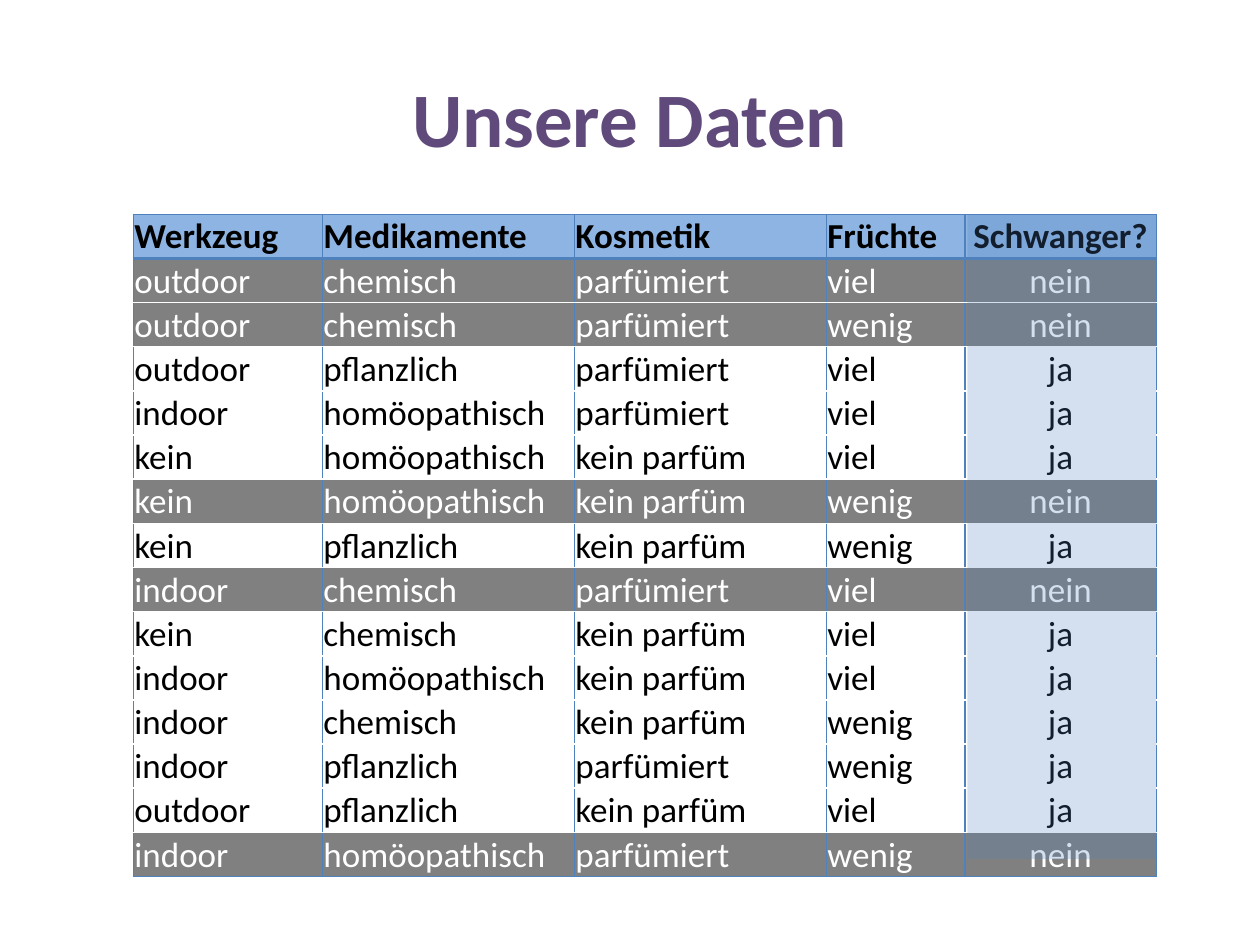
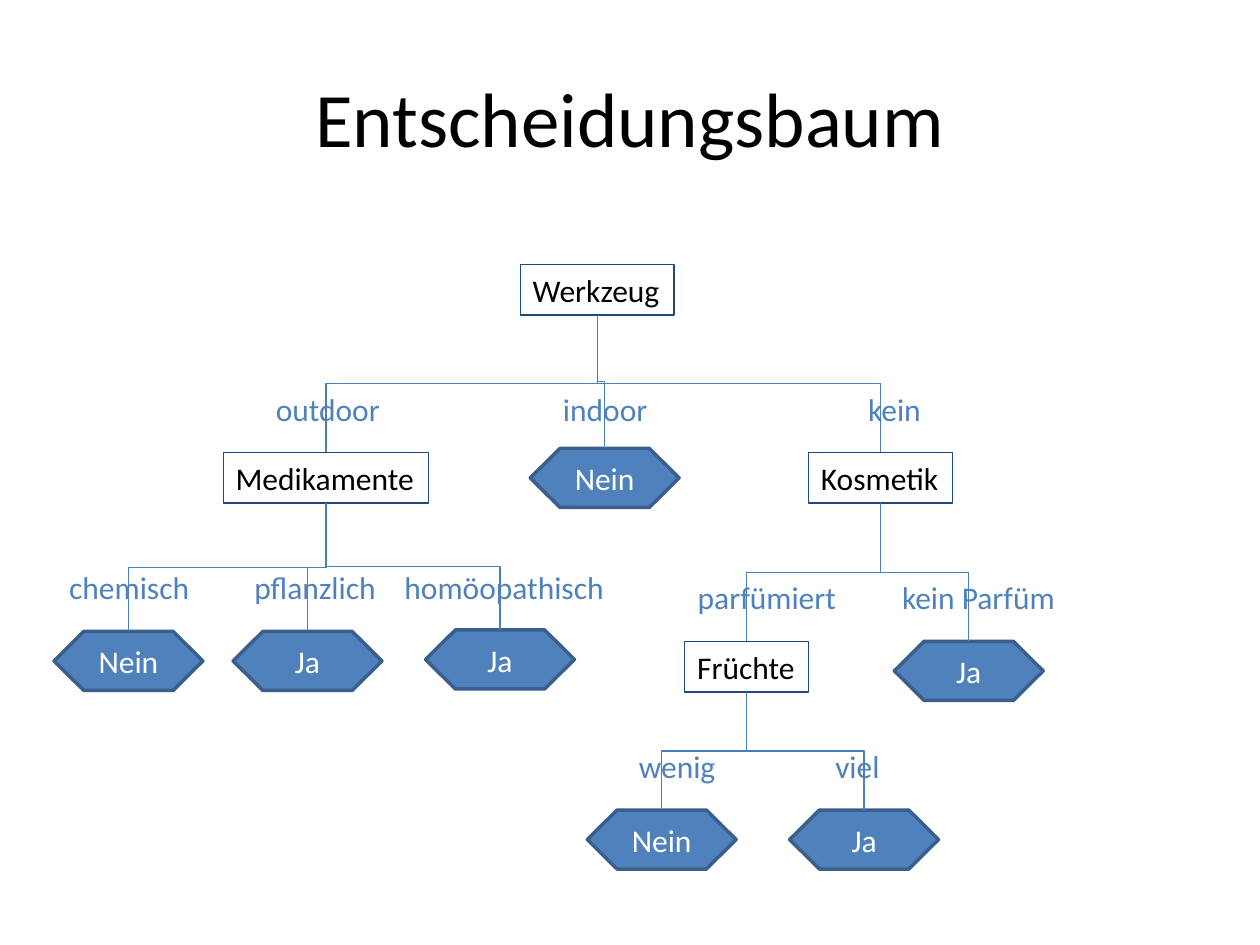
import lxml.etree
import pptx
import pptx.dml.color
import pptx.enum.shapes
import pptx.enum.text
import pptx.oxml.ns
import pptx.util

Cm = pptx.util.Cm
Pt = pptx.util.Pt
FONT = "Calibri"
HUES = {
    "black": "000000", "white": "FFFFFF", "plum": "604A7B", "blue": "4F81BD",
    "sky": "8EB4E3", "gray": "808080", "navy": "1F497D", "edge": "3A5F8C", "link": "4B7EBC",
}
HEADS = ["Werkzeug", "Medikamente", "Kosmetik", "Früchte", "Schwanger?"]
CASES = [
    ("outdoor", "chemisch", "parfümiert", "viel", "nein"),
    ("outdoor", "chemisch", "parfümiert", "wenig", "nein"),
    ("outdoor", "pflanzlich", "parfümiert", "viel", "ja"),
    ("indoor", "homöopathisch", "parfümiert", "viel", "ja"),
    ("kein", "homöopathisch", "kein parfüm", "viel", "ja"),
    ("kein", "homöopathisch", "kein parfüm", "wenig", "nein"),
    ("kein", "pflanzlich", "kein parfüm", "wenig", "ja"),
    ("indoor", "chemisch", "parfümiert", "viel", "nein"),
    ("kein", "chemisch", "kein parfüm", "viel", "ja"),
    ("indoor", "homöopathisch", "kein parfüm", "viel", "ja"),
    ("indoor", "chemisch", "kein parfüm", "wenig", "ja"),
    ("indoor", "pflanzlich", "parfümiert", "wenig", "ja"),
    ("outdoor", "pflanzlich", "kein parfüm", "viel", "ja"),
    ("indoor", "homöopathisch", "parfümiert", "wenig", "nein"),
]
WIDTHS = [3.81, 5.08, 5.08, 2.79, 3.86]
ROW = 0.89

FRUIT = {"text": "Früchte", "x": 13.95, "y": 7.6, "wide": 2.49, "tags": 9.61, "kids": [
    ("wenig", 12.57, 2.08, {"text": "Nein", "x": 12.24, "y": 11}),
    ("viel", 16.2, 1.42, {"text": "Ja", "x": 16.32, "y": 11}),
]}
DRUGS = {"text": "Medikamente", "x": 5.47, "y": 3.79, "wide": 4.14, "tags": 6, "kids": [
    ("chemisch", 1.53, 2.97, {"text": "Nein", "x": 1.49, "y": 7.4}),
    ("pflanzlich", 5.28, 3, {"text": "Ja", "x": 5.1, "y": 7.4}),
    ("homöopathisch", 9.09, 4.57, {"text": "Ja", "x": 8.98, "y": 7.37}),
]}
CARE = {"text": "Kosmetik", "x": 16.65, "y": 3.79, "wide": 2.9, "tags": 6.2, "kids": [
    ("parfümiert", 14.38, 3.33, FRUIT),
    ("kein Parfüm", 18.65, 3.63, {"text": "Ja", "x": 18.43, "y": 7.6}),
]}
TREE = {"text": "Werkzeug", "x": 10.94, "y": 0, "wide": 3.1, "tags": 2.4, "kids": [
    ("outdoor", 5.53, 2.64, DRUGS),
    ("indoor", 11.12, 2.24, {"text": "Nein", "x": 11.09, "y": 3.71}),
    ("kein", 16.95, 1.6, CARE),
]}


def rgb(hue):
    """Return the named colour."""
    return pptx.dml.color.RGBColor.from_string(HUES[hue])


def write(frame, text, size, hue, bold=False, align=None):
    """Put one formatted paragraph into a text frame."""
    frame.text = text
    para = frame.paragraphs[0]
    para.alignment = align
    font = para.font
    font.name, font.size, font.bold = FONT, Pt(size), bold
    font.color.rgb = rgb(hue)


def start(deck, title, hue, bold=False):
    """Add a slide with a formatted title."""
    slide = deck.slides.add_slide(deck.slide_layouts[5])
    head = slide.shapes.title
    head.left, head.top, head.width, head.height = Cm(1.27), Cm(0.76), Cm(22.86), Cm(3.18)
    write(head.text_frame, title, 44, hue, bold, pptx.enum.text.PP_ALIGN.CENTER)
    return slide


def child(parent, tag, **attrs):
    """Append a drawing element."""
    return lxml.etree.SubElement(parent, pptx.oxml.ns.qn(tag), **attrs)


def border(cell, sides):
    """Draw the cell borders given as side and width in points."""
    props = cell._tc.get_or_add_tcPr()
    for side, width in sides.items():
        line = child(props, "a:ln" + side, w=str(Pt(width)))
        child(child(line, "a:solidFill"), "a:srgbClr", val=HUES["blue"])


def fill(cell, text, hue, back, bold, last):
    """Format one table cell."""
    cell.margin_left = cell.margin_right = cell.margin_top = Cm(0.02)
    cell.margin_bottom = 0
    cell.vertical_anchor = pptx.enum.text.MSO_ANCHOR.BOTTOM
    align = pptx.enum.text.PP_ALIGN.CENTER if last else None
    write(cell.text_frame, text, 20, hue, bold, align)
    if back:
        cell.fill.solid()
        cell.fill.fore_color.rgb = rgb(back)
    else:
        cell.fill.background()


def grid(slide, left, top):
    """Draw the data table and tint its answer column."""
    rows = [HEADS, *CASES]
    frame = slide.shapes.add_table(len(rows), len(HEADS), Cm(left), Cm(top),
                                   Cm(sum(WIDTHS)), Cm(ROW * len(rows)))
    table = frame.table
    table.first_row = table.horz_banding = False
    for col, width in zip(table.columns, WIDTHS):
        col.width = Cm(width)
    for r, row in enumerate(rows):
        table.rows[r].height = Cm(ROW)
        if r == 0:
            hue, back, sides = "black", "sky", {"L": 1, "R": 1, "T": 1, "B": 2}
        else:
            hue, back = ("white", "gray") if row[-1] == "nein" else ("black", None)
            sides = {"L": 1, "R": 1, "B": 1}
        for c, text in enumerate(row):
            cell = table.cell(r, c)
            border(cell, sides)
            fill(cell, text, hue, back, r == 0, c == len(row) - 1)
    tint = slide.shapes.add_shape(pptx.enum.shapes.MSO_SHAPE.RECTANGLE,
                                  Cm(left + 16.81), Cm(top), Cm(3.81), Cm(13))
    tint.shadow.inherit = False
    tint.line.fill.background()
    tint.fill.solid()
    tint.fill.fore_color.rgb = rgb("blue")
    shade = tint.fill._xPr.find(".//" + pptx.oxml.ns.qn("a:srgbClr"))
    child(shade, "a:alpha", val="24000")


def label(slide, text, mid, top, wide, hue):
    """Add a one-line text box around a middle."""
    box = slide.shapes.add_textbox(Cm(mid - wide / 2), Cm(top), Cm(wide), Cm(1.02))
    write(box.text_frame, text, 18, hue)
    box.text_frame.word_wrap = False
    box.text_frame.auto_size = pptx.enum.text.MSO_AUTO_SIZE.SHAPE_TO_FIT_TEXT
    return box


def leaf(slide, text, mid, top):
    """Add an answer hexagon."""
    shape = slide.shapes.add_shape(pptx.enum.shapes.MSO_SHAPE.FLOWCHART_PREPARATION,
                                   Cm(mid - 1.5), Cm(top), Cm(3), Cm(1.19))
    shape.shadow.inherit = False
    shape.fill.solid()
    shape.fill.fore_color.rgb = rgb("blue")
    shape.line.color.rgb = rgb("edge")
    shape.line.width = Pt(2)
    write(shape.text_frame, text, 18, "white", align=pptx.enum.text.PP_ALIGN.CENTER)
    return shape


def link(slide, upper, lower):
    """Join two nodes by an elbow that leaves downwards."""
    x1, y1 = upper.left + upper.width // 2, upper.top + upper.height
    x2, y2 = lower.left + lower.width // 2, lower.top
    line = slide.shapes.add_connector(pptx.enum.shapes.MSO_CONNECTOR.ELBOW, x1, y1, x2, y2)
    line.begin_connect(upper, 2)
    line.end_connect(lower, 0)
    line.width, line.height = y2 - y1, abs(x2 - x1)
    line.left = (x1 + x2 - line.width) // 2
    line.top = (y1 + y2 - line.height) // 2
    right = x2 > x1
    form = line._element.spPr.find(pptx.oxml.ns.qn("a:xfrm"))
    form.set("rot", str((270 if right else 90) * 60000))
    form.set("flipH", str(int(right)))
    form.set("flipV", "0")
    line.line.color.rgb = rgb("link")
    line.line.width = Pt(0.75)
    child(line._element.spPr, "a:effectLst")


def branch(slide, node, left, top):
    """Draw a node with all that hangs below it."""
    mid, high = left + node["x"], top + node["y"]
    if "kids" not in node:
        return leaf(slide, node["text"], mid, high)
    box = label(slide, node["text"], mid, high, node["wide"], "black")
    box.line.color.rgb = rgb("navy")
    box.line.width = Pt(0.75)
    for text, x, wide, kid in node["kids"]:
        link(slide, box, branch(slide, kid, left, top))
        label(slide, text, left + x, top + node["tags"], wide, "blue")
    return box


def main():
    """Build and save the deck."""
    deck = pptx.Presentation()
    deck.slide_width, deck.slide_height = Cm(25.4), Cm(19.05)
    grid(start(deck, "Unsere Daten", "plum", True), 2.69, 4.32)
    branch(start(deck, "Entscheidungsbaum", "black"), TREE, 1.1, 5.33)
    deck.save("out.pptx")


if __name__ == "__main__":
    main()
